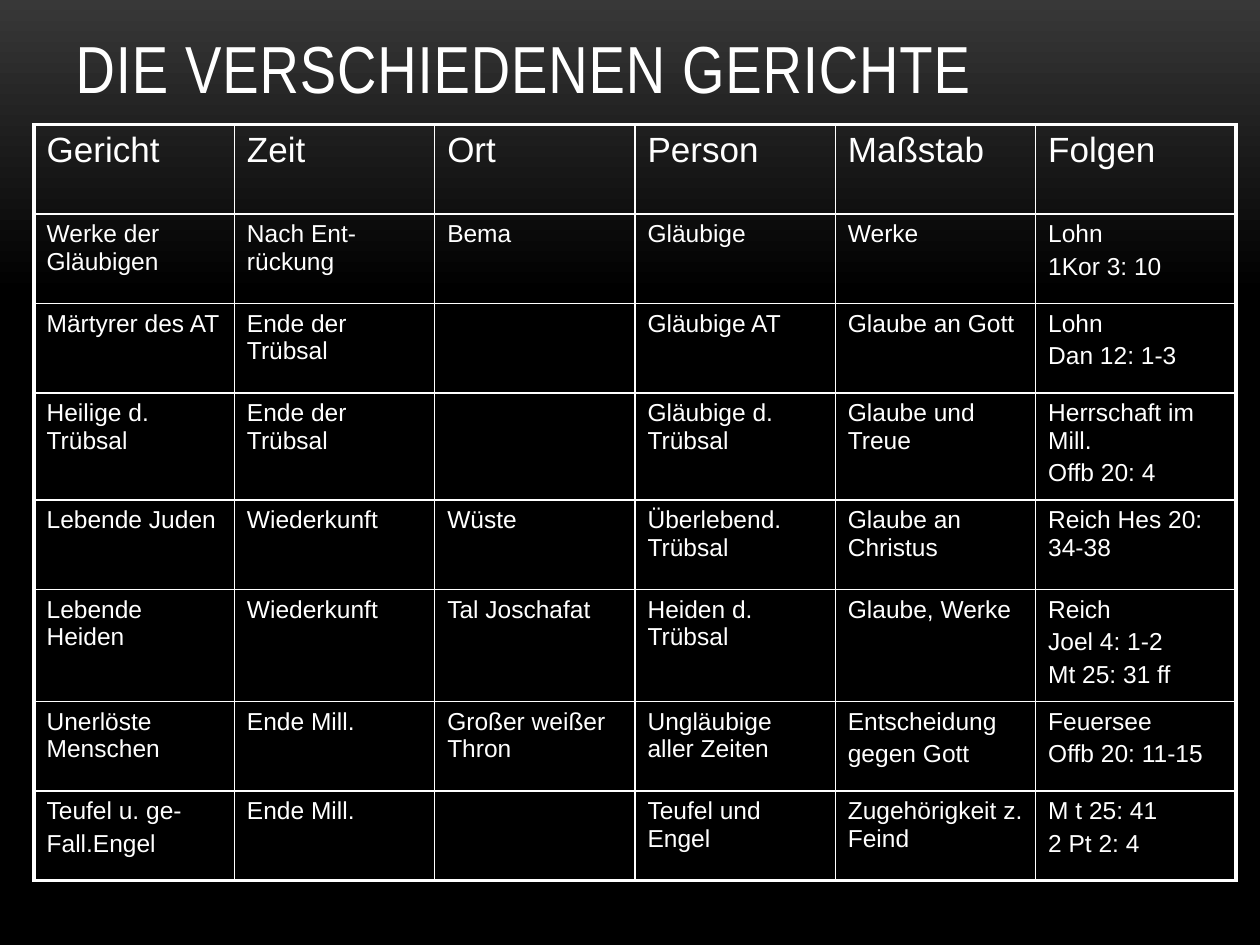
from copy import deepcopy

from lxml import etree
from pptx import Presentation
from pptx.dml.color import RGBColor
from pptx.enum.text import MSO_ANCHOR, PP_ALIGN
from pptx.oxml.ns import qn
from pptx.util import Inches, Pt

LEFT = PP_ALIGN.LEFT
BOTTOM = MSO_ANCHOR.BOTTOM
TITLE_ONLY = 5

COLORS = {"text": "FFFFFF", "line": "FFFFFF", "glow": "383838", "base": "000000"}
THIN, THICK = 1, 2.25

HEADINGS = ["Gericht", "Zeit", "Ort", "Person", "Maßstab", "Folgen"]
# A line feed inside a cell starts a new paragraph.
JUDGEMENTS = [
    ["Werke der Gläubigen", "Nach Ent- rückung", "Bema", "Gläubige", "Werke",
     "Lohn\n1Kor 3: 10"],
    ["Märtyrer des AT", "Ende der Trübsal", "", "Gläubige AT", "Glaube an Gott",
     "Lohn\nDan 12: 1-3"],
    ["Heilige d. Trübsal", "Ende der Trübsal", "", "Gläubige d. Trübsal",
     "Glaube und Treue", "Herrschaft im Mill.\nOffb 20: 4"],
    ["Lebende Juden", "Wiederkunft", "Wüste", "Überlebend. Trübsal",
     "Glaube an Christus", "Reich Hes 20: 34-38"],
    ["Lebende Heiden", "Wiederkunft", "Tal Joschafat", "Heiden d. Trübsal",
     "Glaube, Werke", "Reich\nJoel 4: 1-2\nMt 25: 31 ff"],
    ["Unerlöste Menschen", "Ende Mill.", "Großer weißer Thron",
     "Ungläubige aller Zeiten", "Entscheidung\ngegen Gott",
     "Feuersee\nOffb 20: 11-15"],
    ["Teufel u. ge-\nFall.Engel", "Ende Mill.", "", "Teufel und Engel",
     "Zugehörigkeit z. Feind", "M t 25: 41\n2 Pt 2: 4"],
]
ROW_HEIGHTS = [0.71, 0.71, 0.71, 0.85, 0.71, 0.89, 0.71, 0.71]
COLUMN_WIDTH = 1.59


class JudgementSlide:
    def __init__(self, presentation):
        self.slide = presentation.slides.add_slide(
            presentation.slide_layouts[TITLE_ONLY])

    def background(self):
        fill = self.slide.background.fill
        fill.gradient()
        fill.gradient_angle = 270
        top, middle = fill.gradient_stops
        top.color.rgb = RGBColor.from_string(COLORS["glow"])
        middle.color.rgb = RGBColor.from_string(COLORS["base"])
        top.position, middle.position = 0, 0.31
        stops = self.slide._element.find(".//" + qn("a:gsLst"))
        bottom = deepcopy(stops[-1])
        bottom.set("pos", "100000")
        stops.append(bottom)

    def style(self, paragraph, size, font_name):
        paragraph.alignment = LEFT
        paragraph.font.size = Pt(size)
        paragraph.font.name = font_name
        paragraph.font.color.rgb = RGBColor.from_string(COLORS["text"])

    def title(self, text):
        title = self.slide.shapes.title
        title.left, title.top = Inches(0.5), Inches(-0.35)
        title.width, title.height = Inches(9), Inches(1.25)
        title.text_frame.vertical_anchor = BOTTOM
        title.text_frame.text = text
        heading = title.text_frame.paragraphs[0]
        self.style(heading, 38, "Arial Narrow")
        heading.runs[0]._r.get_or_add_rPr().set("spc", "50")

    def borders(self, cell, widths):
        """Draw the left, right, top and bottom lines, widths in points."""
        properties = cell._tc.get_or_add_tcPr()
        for position, (side, width) in enumerate(zip("LRTB", widths)):
            line = etree.Element(qn("a:ln" + side), w=str(Pt(width)))
            solid = etree.SubElement(line, qn("a:solidFill"))
            etree.SubElement(solid, qn("a:srgbClr"), val=COLORS["line"])
            properties.insert(position, line)

    def cell(self, cell, text, size):
        cell.fill.background()
        cell.text = text
        for index, paragraph in enumerate(cell.text_frame.paragraphs):
            if index:
                paragraph.space_before = Pt(0.2 * size)
            self.style(paragraph, size, "Arial")

    def table(self, rows):
        last_row, last_column = len(rows) - 1, len(rows[0]) - 1
        table = self.slide.shapes.add_table(
            len(rows), len(rows[0]), Inches(0.27), Inches(0.99),
            Inches(COLUMN_WIDTH * len(rows[0])), Inches(sum(ROW_HEIGHTS))).table
        table.first_row = table.horz_banding = False
        for column in table.columns:
            column.width = Inches(COLUMN_WIDTH)
        for r, (texts, height) in enumerate(zip(rows, ROW_HEIGHTS)):
            table.rows[r].height = Inches(height)
            for c, text in enumerate(texts):
                cell = table.cell(r, c)
                self.cell(cell, text, 14 if r else 20)
                outer = (c == 0, c == last_column, r == 0, r == last_row)
                self.borders(cell, [THICK if edge else THIN for edge in outer])


def main():
    presentation = Presentation()
    presentation.slide_width, presentation.slide_height = Inches(10), Inches(7.5)
    page = JudgementSlide(presentation)
    page.background()
    page.title("DIE VERSCHIEDENEN GERICHTE")
    page.table([HEADINGS] + JUDGEMENTS)
    presentation.save("out.pptx")


if __name__ == "__main__":
    main()
